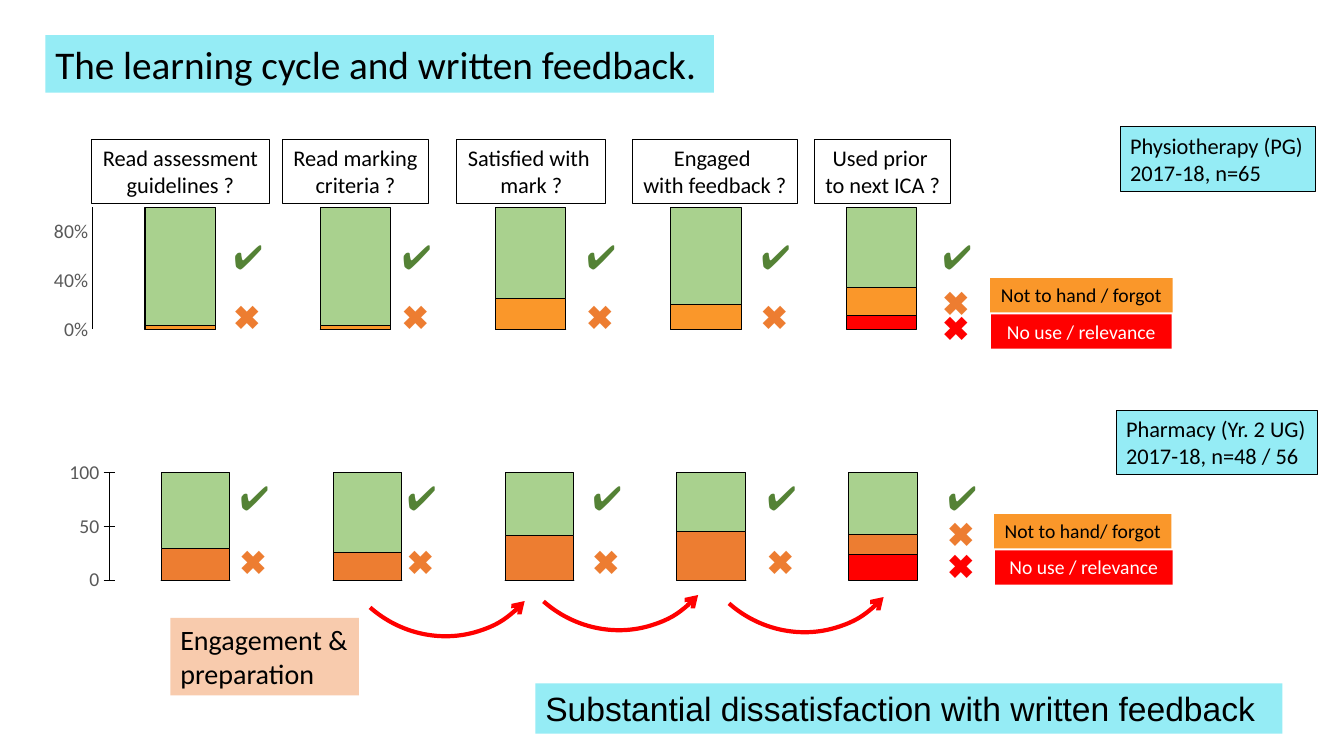
"""Build the slide on the learning cycle and written feedback in two student cohorts."""
from dataclasses import dataclass

from lxml.etree import SubElement, fromstring
from pptx import Presentation
from pptx.chart.data import CategoryChartData
from pptx.dml.color import RGBColor
from pptx.enum.chart import XL_CHART_TYPE, XL_TICK_MARK
from pptx.enum.shapes import MSO_SHAPE
from pptx.enum.text import MSO_AUTO_SIZE, PP_ALIGN
from pptx.oxml.ns import nsdecls, qn
from pptx.util import Pt

PX = 9144


@dataclass(frozen=True)
class Theme:
    black: RGBColor = RGBColor.from_string("000000")
    white: RGBColor = RGBColor.from_string("FFFFFF")
    grey: RGBColor = RGBColor.from_string("595959")
    cyan: RGBColor = RGBColor.from_string("95ECF5")
    peach: RGBColor = RGBColor.from_string("F8CBAD")
    red: RGBColor = RGBColor.from_string("FF0000")
    amber: RGBColor = RGBColor.from_string("FA972A")
    orange: RGBColor = RGBColor.from_string("ED7D31")
    light_green: RGBColor = RGBColor.from_string("A9D18E")
    green: RGBColor = RGBColor.from_string("548235")
    body: str = "Calibri"
    symbol: str = "Arial"
    title: int = 28
    mark: int = 24
    stage: int = 20
    box: int = 16
    label: int = 14
    chart: int = 10
    thin: float = 0.75
    thick: int = 3


T = Theme()

prs = Presentation()
prs.slide_width, prs.slide_height = 1333 * PX, 750 * PX
s = prs.slides.add_slide(prs.slide_layouts[6])


def add_text(box, lines, size, color=T.black, font=T.body, fill=None,
             border=False, align=PP_ALIGN.LEFT, wrap=True):
    sp = s.shapes.add_textbox(*(v * PX for v in box))
    if fill is not None:
        sp.fill.solid()
        sp.fill.fore_color.rgb = fill
    if border:
        sp.line.color.rgb = T.black
        sp.line.width = Pt(T.thin)
    tf = sp.text_frame
    tf.word_wrap = wrap
    tf.auto_size = MSO_AUTO_SIZE.SHAPE_TO_FIT_TEXT
    for i, line in enumerate(lines):
        p = tf.paragraphs[0] if i == 0 else tf.add_paragraph()
        p.alignment = align
        r = p.add_run()
        r.text = line
        r.font.name, r.font.size = font, Pt(size)
        r.font.color.rgb = color


def add_cohort_chart(kind, box, layout, series, top, unit, tick, number_format):
    data = CategoryChartData()
    data.categories = ["1", "2", "3", "4", "5"]
    for i, (values, _) in enumerate(series, 1):
        data.add_series(f"Series {i}", values)
    chart = s.shapes.add_chart(kind, *(v * PX for v in box), data).chart
    chart.has_legend = chart.has_title = False
    chart.font.name, chart.font.size = T.body, Pt(T.chart)
    chart.font.color.rgb = T.black
    plot = chart.plots[0]
    plot.vary_by_categories = False
    plot.gap_width, plot.overlap = 150, 100
    for ser, (_, color) in zip(plot.series, series):
        ser.format.fill.solid()
        ser.format.fill.fore_color.rgb = color
        ser.format.line.color.rgb = T.black
        ser.format.line.width = Pt(T.thin)
    chart.category_axis.visible = False
    axis = chart.value_axis
    axis.has_major_gridlines = False
    axis.minimum_scale, axis.maximum_scale, axis.major_unit = 0, top, unit
    axis.major_tick_mark, axis.minor_tick_mark = tick, XL_TICK_MARK.NONE
    axis.format.line.color.rgb = T.black
    axis.format.line.width = Pt(T.thin)
    labels = axis.tick_labels
    labels.number_format, labels.number_format_is_linked = number_format, False
    labels.font.name, labels.font.size = T.body, Pt(T.label)
    labels.font.color.rgb = T.grey
    area = chart._chartSpace.find(qn("c:chart")).find(qn("c:plotArea"))
    for old in area.findall(qn("c:layout")):
        area.remove(old)
    parts = "".join(f'<c:{k} val="{v}"/>' for k, v in zip("xywh", layout))
    area.insert(0, fromstring(
        f'<c:layout {nsdecls("c")}><c:manualLayout><c:layoutTarget val="inner"/>'
        f'<c:xMode val="edge"/><c:yMode val="edge"/>{parts}</c:manualLayout></c:layout>'))


add_text((45, 35, 663, 57), ["The learning cycle and written feedback."], T.title, fill=T.cyan)

questions = [
    (91, 176, ["Read assessment", "guidelines ?"]),
    (280, 145, ["Read marking", "criteria ?"]),
    (453, 148, ["Satisfied with ", "mark ?"]),
    (627, 164, ["Engaged ", "with feedback ?"]),
    (808, 135, ["Used prior ", "to next ICA ?"]),
]
for x, w, lines in questions:
    add_text((x, 138, w, 64), lines, T.box, border=True, align=PP_ALIGN.CENTER, wrap=False)

add_cohort_chart(
    XL_CHART_TYPE.COLUMN_STACKED_100, (35, 203, 945, 139), (0.06, 0.02, 0.92, 0.87),
    [([0, 0, 0, 0, 11], T.red),
     ([3, 3, 25, 20, 23], T.amber),
     ([97, 97, 75, 80, 66], T.light_green)],
    1, 0.4, XL_TICK_MARK.NONE, "0%")
add_cohort_chart(
    XL_CHART_TYPE.COLUMN_STACKED, (53, 455, 927, 137), (0.06, 0.1, 0.92, 0.78),
    [([0, 0, 0, 0, 24], T.red),
     ([29, 26, 41, 45, 18], T.orange),
     ([71, 74, 59, 55, 58], T.light_green)],
    100, 50, XL_TICK_MARK.CROSS, "General")

mark_rows = [
    ([222, 389, 572, 745, 925], 23, 229, [289] * 4 + [275], 300),
    ([228, 394, 578, 751, 930], 39, 468, [532] * 4 + [504], 536),
]
for xs, h, tick_y, cross_ys, red_y in mark_rows:
    marks = [(x, tick_y, "✔", T.green) for x in xs]
    marks += [(x, y, "✖", T.orange) for x, y in zip(xs, cross_ys)]
    marks.append((xs[-1], red_y, "✖", T.red))
    for x, y, symbol, color in marks:
        add_text((x, y, 54, h), [symbol], T.mark, color, T.symbol)

reasons = [
    ((982, 276, 181, 34), "Not to hand / forgot", T.black, T.amber, False),
    ((983, 312, 179, 34), "No use / relevance", T.white, T.red, True),
    ((986, 510, 176, 34), "Not to hand/ forgot", T.black, T.amber, False),
    ((987, 546, 176, 34), "No use / relevance", T.white, T.red, True),
]
for box, line, color, fill, wrap in reasons:
    add_text(box, [line], T.label, color, fill=fill, align=PP_ALIGN.CENTER, wrap=wrap)

cohorts = [
    ((1111, 126, 194, 64), ["Physiotherapy (PG)", "2017-18, n=65"]),
    ((1107, 407, 200, 64), ["Pharmacy (Yr. 2 UG)", "2017-18, n=48 / 56"]),
]
for box, lines in cohorts:
    add_text(box, lines, T.box, fill=T.cyan, border=True)

for x, y in [(331, 412), (503, 406), (687, 408)]:
    sp = s.shapes.add_shape(MSO_SHAPE.ARC, x * PX, y * PX, 212 * PX, 222 * PX)
    sp.rotation = 131.3
    sp.shadow.inherit = False
    sp.fill.background()
    sp.line.color.rgb = T.red
    sp.line.width = Pt(T.thick)
    SubElement(sp._element.spPr.find(qn("a:ln")), qn("a:headEnd"), type="arrow")

add_text((531, 678, 741, 50), ["Substantial dissatisfaction with written feedback"],
         T.mark, font=T.symbol, fill=T.cyan)
add_text((169, 613, 187, 77), ["Engagement &", "preparation"], T.stage, fill=T.peach)

prs.save("out.pptx")
